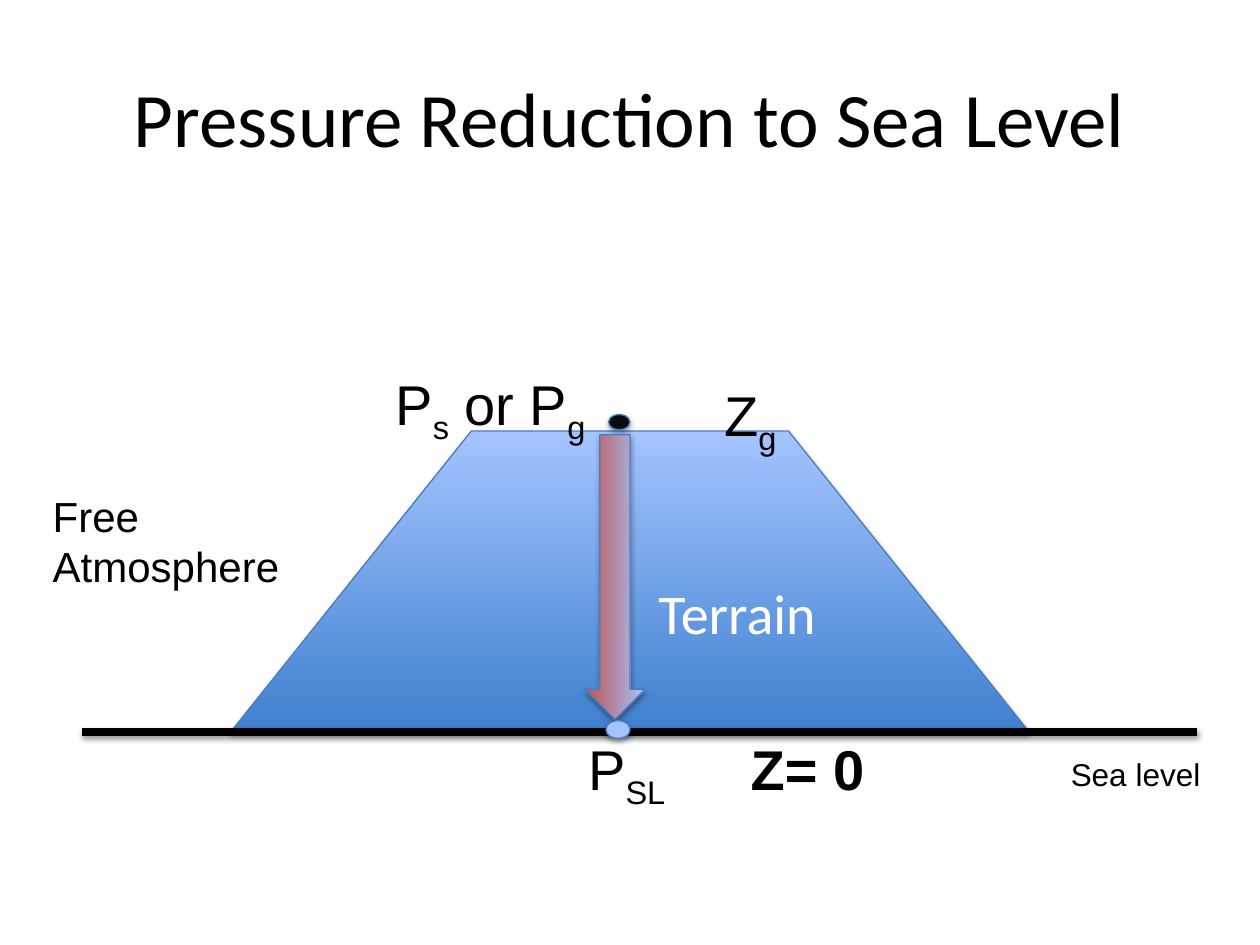
"""Build the slide on reducing surface pressure to sea level."""
import pptx
import pptx.dml.color
import pptx.enum.shapes
import pptx.enum.text
import pptx.oxml.ns
import pptx.util
from lxml import etree

Inches, Pt = pptx.util.Inches, pptx.util.Pt
RGBColor = pptx.dml.color.RGBColor
Shape = pptx.enum.shapes.MSO_SHAPE
Align, Anchor = pptx.enum.text.PP_ALIGN, pptx.enum.text.MSO_ANCHOR
qn = pptx.oxml.ns.qn

BLACK = RGBColor(0x00, 0x00, 0x00)
WHITE = RGBColor(0xFF, 0xFF, 0xFF)
OUTLINE = RGBColor(0x4B, 0x7E, 0xBC)
BLUE = RGBColor(0x3F, 0x80, 0xCE)
PALE_BLUE = RGBColor(0xA4, 0xC4, 0xFF)
RED = RGBColor(0xC0, 0x50, 0x4D)
INK = RGBColor(0x07, 0x0A, 0x0C)
SOFT_INK = RGBColor(0x09, 0x0C, 0x0F)

SEA_LEVEL = 5.81
TITLE = "Pressure Reduction to Sea Level"
TERRAIN = ((1.83, 3.42, 6.34, 2.39), ((0, BLUE), (1, PALE_BLUE)), 90)
SURFACE_DOT = ((4.83, 3.29, 0.17, 0.12), ((0.05, INK), (0.06, SOFT_INK)), 0)
ARROW = ((3.75, 4.34, 2.26, 0.48), ((0, RED), (1, PALE_BLUE)), 90)
SEA_DOT = ((4.81, 5.72, 0.19, 0.14), ((0, BLACK), (0.01, PALE_BLUE)), 0)

SEA_LABEL = ((8.4, 5.94, 1.24, 0.4), 18, False, [["Sea level"]])
UPPER_LABELS = [
    ((5.65, 2.97, 0.77, 0.64), 32, False, [["Z", "g"]]),
    ((3.04, 2.88, 1.89, 0.64), 32, False, [["P", "s", " or P", "g"]]),
    ((0.32, 3.84, 2.02, 0.91), 24, False, [["Free"], ["Atmosphere"]]),
    ((5.86, 5.78, 1.11, 0.64), 32, True, [["Z= 0"]]),
]
PRESSURE_LABEL = ((4.57, 5.78, 0.98, 0.64), 32, False, [["P", "SL"]])


def set_font(para, name, size, color, bold=False):
    font = para.font
    font.name, font.size, font.bold = name, Pt(size), bold
    font.color.rgb = color


def add_shadow(item, opacity, distance):
    effects = etree.SubElement(item._element.spPr, qn("a:effectLst"))
    shadow = etree.SubElement(
        effects, qn("a:outerShdw"), blurRad=str(Pt(3.1)),
        dist=str(Pt(distance)), dir="5400000", rotWithShape="0")
    color = etree.SubElement(shadow, qn("a:srgbClr"), val=str(BLACK))
    etree.SubElement(color, qn("a:alpha"), val=str(opacity * 1000))


def add_solid(slide, kind, bounds, stops, angle):
    shape = slide.shapes.add_shape(kind, *map(Inches, bounds))
    shape.fill.gradient()
    shape.fill.gradient_angle = angle
    for stop, (position, color) in zip(shape.fill.gradient_stops, stops):
        stop.position = position
        stop.color.rgb = color
    shape.line.color.rgb = OUTLINE
    shape.line.width = Pt(0.75)
    add_shadow(shape, 35, 1.8)
    return shape


def add_label(slide, bounds, size, bold, lines):
    box = slide.shapes.add_textbox(*map(Inches, bounds))
    frame = box.text_frame
    frame.word_wrap = False
    frame.auto_size = pptx.enum.text.MSO_AUTO_SIZE.SHAPE_TO_FIT_TEXT
    for index, parts in enumerate(lines):
        para = frame.add_paragraph() if index else frame.paragraphs[0]
        set_font(para, "Arial", size, BLACK, bold)
        for position, text in enumerate(parts):
            span = para.add_run()
            span.text = text
            if position % 2:
                span.font._element.set("baseline", "-25000")


def add_title(slide):
    box = slide.shapes.add_textbox(*map(Inches, (0.5, 0.3, 9, 1.25)))
    frame = box.text_frame
    frame.word_wrap = True
    frame.vertical_anchor = Anchor.MIDDLE
    para = frame.paragraphs[0]
    para.text = TITLE
    para.alignment = Align.CENTER
    set_font(para, "Calibri", 44, BLACK)


def add_terrain(slide):
    terrain = add_solid(slide, Shape.TRAPEZOID, *TERRAIN)
    terrain.adjustments[0] = 0.8
    frame = terrain.text_frame
    frame.margin_left = Inches(1.8)
    frame.vertical_anchor = Anchor.MIDDLE
    para = frame.paragraphs[0]
    para.text = "Terrain"
    para.alignment = Align.CENTER
    set_font(para, "Calibri", 32, WHITE)


def add_sea_line(slide):
    line = slide.shapes.add_connector(
        pptx.enum.shapes.MSO_CONNECTOR.STRAIGHT,
        Inches(0.65), Inches(SEA_LEVEL), Inches(9.5), Inches(SEA_LEVEL))
    line.line.color.rgb = BLACK
    line.line.width = Pt(4.25)
    add_shadow(line, 38, 1.6)


def main():
    deck = pptx.Presentation()
    deck.slide_width, deck.slide_height = Inches(10), Inches(7.5)
    slide = deck.slides.add_slide(deck.slide_layouts[6])
    add_title(slide)
    add_terrain(slide)
    add_sea_line(slide)
    add_label(slide, *SEA_LABEL)
    add_solid(slide, Shape.OVAL, *SURFACE_DOT)
    for label in UPPER_LABELS:
        add_label(slide, *label)
    arrow = add_solid(slide, Shape.RIGHT_ARROW, *ARROW)
    arrow.rotation = 90
    add_label(slide, *PRESSURE_LABEL)
    add_solid(slide, Shape.OVAL, *SEA_DOT)
    deck.save("out.pptx")


if __name__ == "__main__":
    main()
